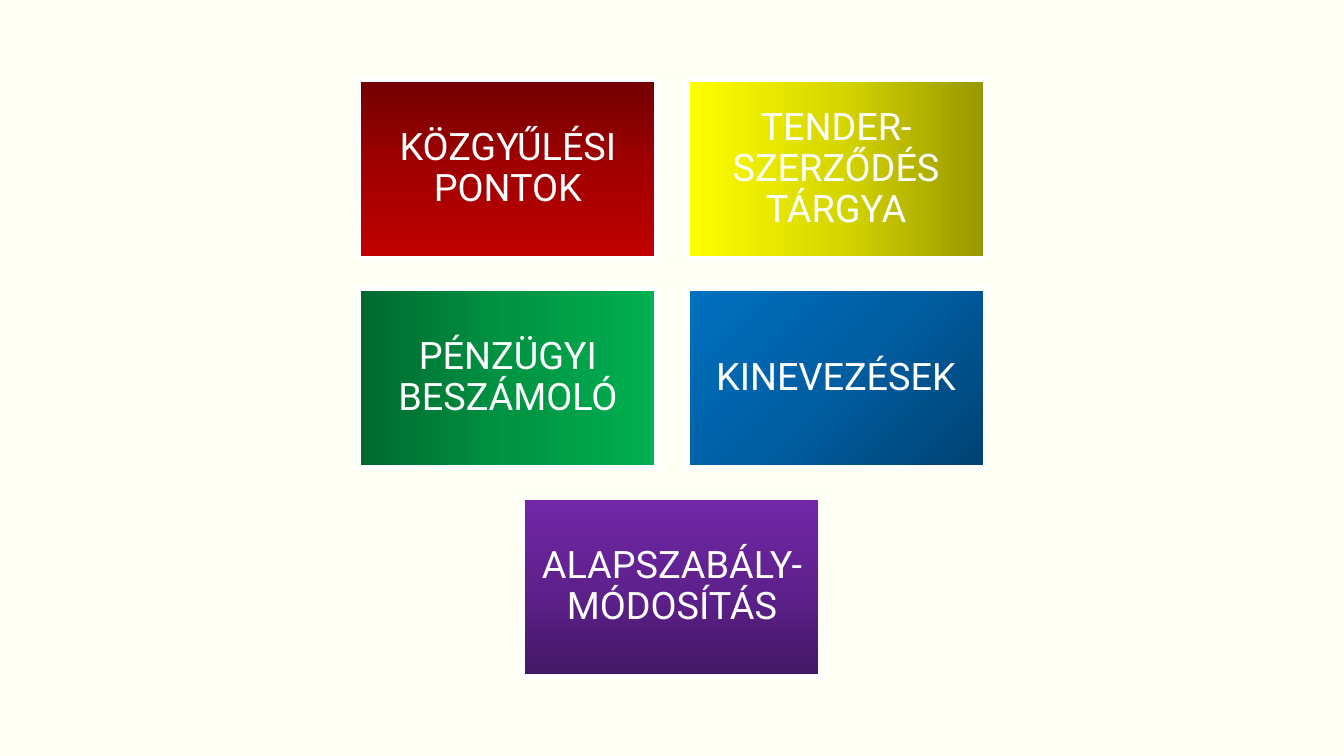
from copy import deepcopy

from pptx import Presentation
from pptx.dml.color import RGBColor
from pptx.enum.shapes import MSO_SHAPE
from pptx.enum.text import MSO_ANCHOR, PP_ALIGN
from pptx.oxml.ns import qn
from pptx.util import Pt

SLIDE_W, SLIDE_H = 960, 540
TILE_W, TILE_H, GAP = 213.1, 127.9, 21.3
INSET = 8.1

IVORY = RGBColor(0xFF, 0xFF, 0xF3)
WHITE = RGBColor(0xFF, 0xFF, 0xFF)
REDS = RGBColor(0x72, 0, 0), RGBColor(0xA2, 0, 0), RGBColor(0xC0, 0, 0)
YELLOWS = RGBColor(0x97, 0x97, 0), RGBColor(0xD7, 0xD7, 0), RGBColor(0xFF, 0xFF, 0)
GREENS = RGBColor(0, 0x68, 0x2F), RGBColor(0, 0x94, 0x43), RGBColor(0, 0xB0, 0x50)
BLUES = RGBColor(0, 0x42, 0x72), RGBColor(0, 0x5E, 0xA2), RGBColor(0, 0x70, 0xC0)
PURPLES = RGBColor(0x43, 0x17, 0x64), RGBColor(0x5F, 0x21, 0x8E), RGBColor(0x71, 0x28, 0xA8)

# Each topic: wording, gradient colours, counterclockwise gradient angle
TOPIC_ROWS = [
    [("KÖZGYŰLÉSI PONTOK", REDS, 270), ("TENDER-SZERZŐDÉS TÁRGYA", YELLOWS, 180)],
    [("PÉNZÜGYI BESZÁMOLÓ", GREENS, 0), ("KINEVEZÉSEK", BLUES, 135)],
    [("ALAPSZABÁLY-MÓDOSÍTÁS", PURPLES, 90)],
]


def fill_gradient(tile, colors, angle):
    """Fill the tile with three evenly spaced colour stops."""
    tile.fill.gradient()
    tile.fill.gradient_angle = angle
    stop_list = tile._element.spPr.find(qn("a:gradFill")).find(qn("a:gsLst"))
    stop_list.insert(1, deepcopy(stop_list[0]))
    for stop, color, position in zip(tile.fill.gradient_stops, colors, (0, 0.5, 1)):
        stop.color.rgb = color
        stop.position = position


prs = Presentation()
prs.slide_width, prs.slide_height = Pt(SLIDE_W), Pt(SLIDE_H)
slide = prs.slides.add_slide(prs.slide_layouts[6])
slide.background.fill.solid()
slide.background.fill.fore_color.rgb = IVORY

row_count = len(TOPIC_ROWS)
top = (SLIDE_H - row_count * TILE_H - (row_count - 1) * GAP) / 2
for topics in TOPIC_ROWS:
    left = (SLIDE_W - len(topics) * TILE_W - (len(topics) - 1) * GAP) / 2
    for wording, colors, angle in topics:
        tile = slide.shapes.add_shape(
            MSO_SHAPE.RECTANGLE, Pt(left), Pt(top), Pt(TILE_W), Pt(TILE_H))
        tile.shadow.inherit = False
        fill_gradient(tile, colors, angle)
        tile.line.color.rgb = WHITE
        tile.line.width = Pt(3.78)

        frame = tile.text_frame
        frame.word_wrap = True
        frame.vertical_anchor = MSO_ANCHOR.MIDDLE
        frame.margin_left = frame.margin_right = Pt(INSET)
        frame.margin_top = frame.margin_bottom = Pt(INSET)
        label = frame.paragraphs[0]
        label.alignment = PP_ALIGN.CENTER
        label.line_spacing = 0.9
        run = label.add_run()
        run.text = wording
        run.font.name = "Roboto"
        run.font.size = Pt(27)
        run.font.color.rgb = WHITE
        left += TILE_W + GAP
    top += TILE_H + GAP

prs.save("out.pptx")
